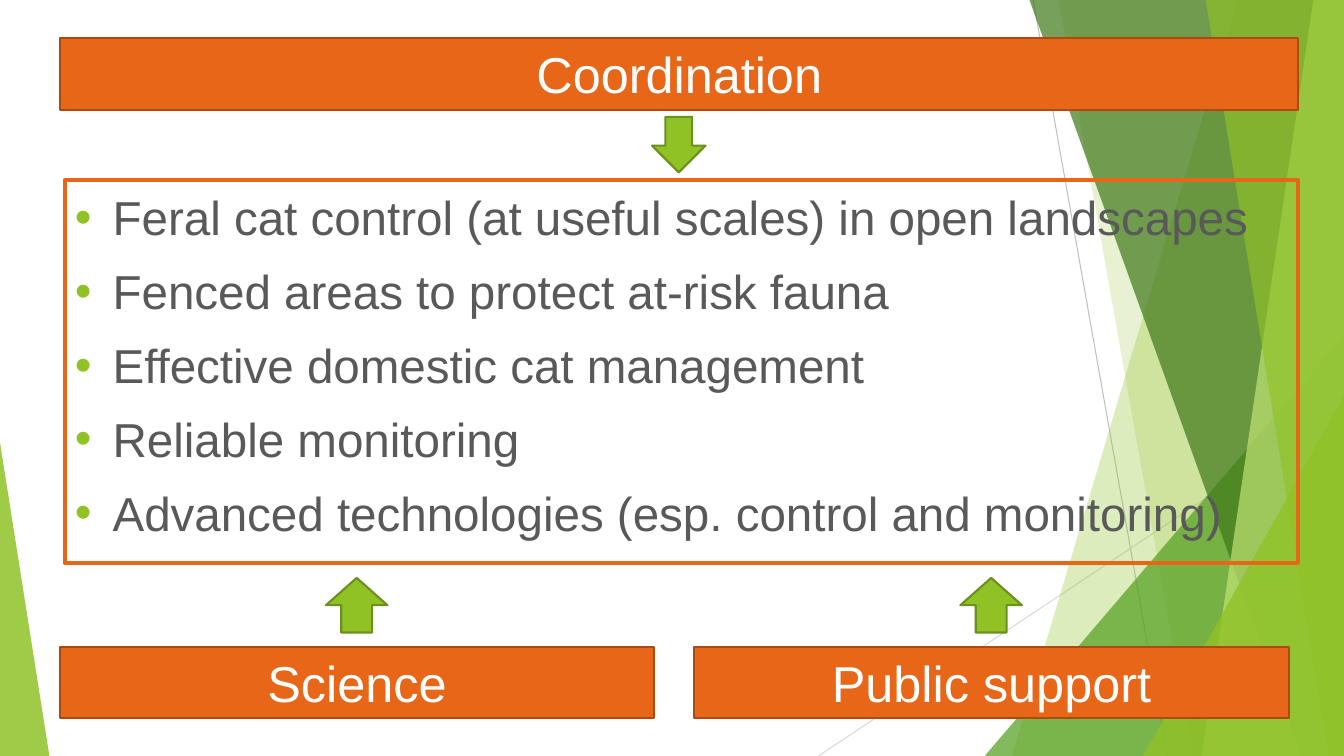
from dataclasses import dataclass

from lxml.etree import SubElement
from pptx import Presentation
from pptx.dml.color import RGBColor
from pptx.enum.shapes import MSO_CONNECTOR as Connector, MSO_SHAPE as Shape
from pptx.enum.text import MSO_ANCHOR as Anchor, MSO_AUTO_SIZE as AutoSize, PP_ALIGN as Align
from pptx.oxml.ns import qn
from pptx.util import Pt

WIDTH, HEIGHT = 960, 540
FACET_TOP = -0.72
FONT = "Arial"
COLORS = {
    "green": "90C226", "green edge": "6B901C", "mid green": "54A021",
    "dark green": "3F7819", "pale green": "C0E474",
    "orange": "E76618", "orange edge": "AB4B12",
    "text": "595959", "white": "FFFFFF",
    "steep line": "BFBFBF", "flat line": "D9D9D9",
}
ACTIONS = [
    "Feral cat control (at useful scales) in open landscapes",
    "Fenced areas to protect at-risk fauna",
    "Effective domestic cat management",
    "Reliable monitoring",
    "Advanced technologies (esp. control and monitoring)",
]


@dataclass
class Ray:
    start: tuple[float, float]
    end: tuple[float, float]
    color: str


@dataclass
class Facet:
    """Full-height band from a slanted left edge to the slide's right edge."""
    top_x: float
    bottom_x: float
    color: str
    opacity: int


@dataclass
class Wedge:
    """Triangle standing on the slide's bottom edge; apex runs from 0 to 1."""
    left: float
    top: float
    width: float
    apex: float
    color: str
    opacity: int


@dataclass
class Banner:
    label: str
    left: float
    top: float
    width: float


@dataclass
class Arrow:
    kind: Shape
    left: float
    top: float
    width: float
    height: float


RAYS = [
    Ray((738, 0), (833.8, HEIGHT), "steep line"),
    Ray((WIDTH, 290.2), (584.6, HEIGHT), "flat line"),
]
BACKDROP = [
    Facet(884.2, 722.9, "green", 30),
    Facet(756, 851.8, "green", 20),
    Wedge(703.4, 239.8, 256.6, 1, "mid green", 72),
    Facet(735.1, 929.5, "dark green", 70),
    Facet(938.2, 858.2, "pale green", 70),
    Facet(861.1, 949, "green", 65),
    Wedge(816.5, 283, 143.5, 1, "green", 80),
    Wedge(0, 316.1, 35.3, 0, "green", 85),
]
BANNERS = [
    Banner("Coordination", 43, 27.4, 884.4),
    Banner("Science", 43, 462.2, 424),
    Banner("Public support", 496, 462.2, 424.5),
]
ARROWS = [
    Arrow(Shape.DOWN_ARROW, 465.8, 83.5, 38.2, 39.6),
    Arrow(Shape.UP_ARROW, 232.8, 412.8, 44, 39),
    Arrow(Shape.UP_ARROW, 686, 412.8, 44, 39),
]


def rgb(name: str) -> RGBColor:
    return RGBColor.from_string(COLORS[name])


def paint(shape, fill: str, edge: str | None = None, opacity: int = 100) -> None:
    shape.shadow.inherit = False
    shape.fill.solid()
    shape.fill.fore_color.rgb = rgb(fill)
    if opacity < 100:
        color = shape.fill._xPr.find(qn("a:solidFill"))[0]
        SubElement(color, qn("a:alpha"), val=str(opacity * 1000))
    if edge:
        shape.line.color.rgb = rgb(edge)
        shape.line.width = Pt(1.5)
    else:
        shape.line.fill.background()


def style_runs(paragraph, size: float, color: str) -> None:
    for run in paragraph.runs:
        run.font.name = FONT
        run.font.size = Pt(size)
        run.font.color.rgb = rgb(color)


def draw_ray(shapes, ray: Ray) -> None:
    line = shapes.add_connector(Connector.STRAIGHT, *map(Pt, ray.start + ray.end))
    line.line.color.rgb = rgb(ray.color)
    line.line.width = Pt(0.75)
    SubElement(line._element.spPr, qn("a:effectLst"))


def draw_facet(shapes, facet: Facet) -> None:
    outline = shapes.build_freeform(Pt(facet.top_x), Pt(FACET_TOP))
    corners = [(WIDTH, FACET_TOP), (WIDTH, HEIGHT), (facet.bottom_x, HEIGHT)]
    outline.add_line_segments([(Pt(x), Pt(y)) for x, y in corners], close=True)
    paint(outline.convert_to_shape(), facet.color, opacity=facet.opacity)


def draw_wedge(shapes, wedge: Wedge) -> None:
    triangle = shapes.add_shape(Shape.ISOSCELES_TRIANGLE, Pt(wedge.left), Pt(wedge.top),
                                Pt(wedge.width), Pt(HEIGHT - wedge.top))
    triangle.adjustments[0] = wedge.apex
    paint(triangle, wedge.color, opacity=wedge.opacity)


def draw_banner(shapes, banner: Banner) -> None:
    box = shapes.add_shape(Shape.RECTANGLE, Pt(banner.left), Pt(banner.top),
                           Pt(banner.width), Pt(51))
    paint(box, "orange", "orange edge")
    frame = box.text_frame
    frame.text = banner.label
    frame.word_wrap = True
    frame.auto_size = AutoSize.SHAPE_TO_FIT_TEXT
    frame.vertical_anchor = Anchor.TOP
    frame.paragraphs[0].alignment = Align.CENTER
    style_runs(frame.paragraphs[0], 36, "white")


def draw_arrow(shapes, arrow: Arrow) -> None:
    block = shapes.add_shape(arrow.kind, Pt(arrow.left), Pt(arrow.top),
                             Pt(arrow.width), Pt(arrow.height))
    paint(block, "green", "green edge")


def add_bullet(paragraph) -> None:
    properties = paragraph._p.get_or_add_pPr()
    properties.set("marL", str(Pt(27)))
    properties.set("indent", str(Pt(-27)))
    color = SubElement(properties, qn("a:buClr"))
    SubElement(color, qn("a:srgbClr"), val=COLORS["green"])
    SubElement(properties, qn("a:buFont"), typeface=FONT)
    SubElement(properties, qn("a:buChar"), char="•")


def fill_actions(body) -> None:
    body.left, body.top, body.width, body.height = map(Pt, (46.2, 128.8, 880.8, 273.4))
    body.line.color.rgb = rgb("orange")
    body.line.width = Pt(3)
    frame = body.text_frame
    frame.text = "\n".join(ACTIONS)
    frame.word_wrap = True
    frame.auto_size = AutoSize.NONE
    frame.vertical_anchor = Anchor.TOP
    for paragraph in frame.paragraphs:
        paragraph.line_spacing = 1.05
        paragraph.space_before = Pt(10)
        add_bullet(paragraph)
        style_runs(paragraph, 34, "text")


def main() -> None:
    deck = Presentation()
    deck.slide_width, deck.slide_height = Pt(WIDTH), Pt(HEIGHT)
    slide = deck.slides.add_slide(deck.slide_layouts[1])
    shapes = slide.shapes
    heading, body = slide.placeholders
    heading._element.getparent().remove(heading._element)

    for ray in RAYS:
        draw_ray(shapes, ray)
    for part in BACKDROP:
        if isinstance(part, Facet):
            draw_facet(shapes, part)
        else:
            draw_wedge(shapes, part)
    fill_actions(body)
    shapes._spTree.append(body._element)  # bring the list in front of the backdrop
    for banner in BANNERS:
        draw_banner(shapes, banner)
    for arrow in ARROWS:
        draw_arrow(shapes, arrow)
    deck.save("out.pptx")


if __name__ == "__main__":
    main()
